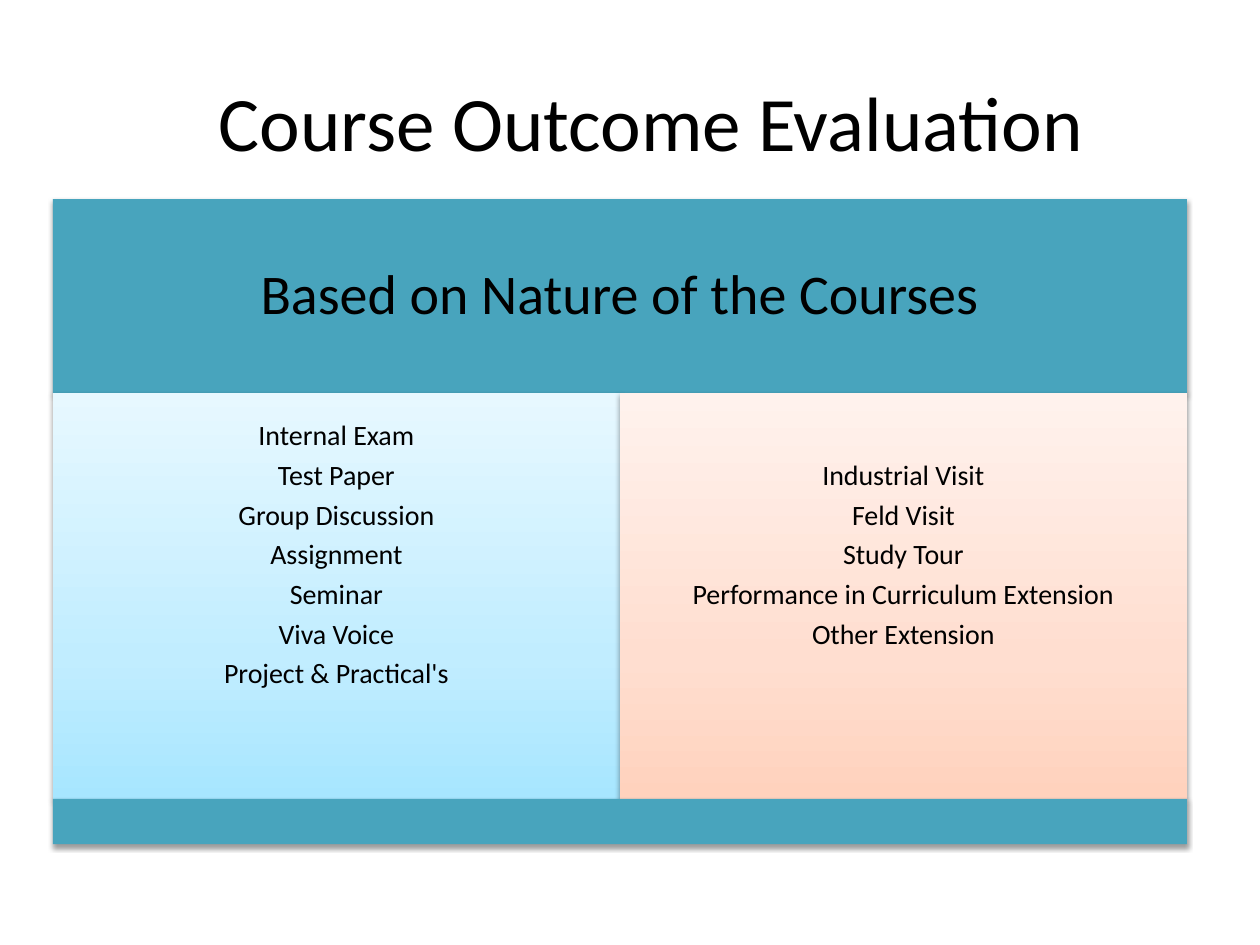
from dataclasses import dataclass

from lxml import etree
from pptx import Presentation
from pptx import util as u
from pptx.dml.color import RGBColor
from pptx.enum import shapes, text
from pptx.oxml.ns import qn

FONT = "Calibri"
COLORS = {"text": "000000", "teal": "48A4BD", "shadow": "000000"}
# Gradient stops as (percent, colour), running from bottom to top
GRADIENTS = {
    "blue": ((0, "A7E6FF"), (35, "C1EDFF"), (100, "E7F8FF")),
    "peach": ((0, "FFD2BD"), (35, "FFDED0"), (100, "FFF2ED")),
}

LEFT, TOP, WIDTH = 0.42, 1.58, 9
HEADER_HEIGHT, COLUMN_HEIGHT, FOOTER_HEIGHT = 1.54, 3.22, 0.36
COLUMN_TOP = TOP + HEADER_HEIGHT
COLUMN_WIDTH = WIDTH / 2


@dataclass
class Panel:
    left: float
    top: float
    width: float
    height: float
    fill: str
    lines: tuple[str, ...] = ()
    size: float = 16
    space_after: float = 5.4
    inset: float = 0.07
    bottom_inset: float = 0.07


PANELS = (
    Panel(LEFT, TOP, WIDTH, HEADER_HEIGHT, "teal",
          ("Based on Nature of the Courses",),
          size=32, space_after=11, inset=0.13, bottom_inset=0.13),
    Panel(LEFT, COLUMN_TOP, COLUMN_WIDTH, COLUMN_HEIGHT, "blue",
          ("Internal Exam", "Test Paper", "Group Discussion", "Assignment",
           "Seminar", "Viva Voice", "Project & Practical's"),
          bottom_inset=0.71),
    Panel(LEFT + COLUMN_WIDTH, COLUMN_TOP, COLUMN_WIDTH, COLUMN_HEIGHT, "peach",
          ("Industrial Visit", "Feld Visit", "Study Tour",
           "Performance in Curriculum Extension", "Other Extension"),
          bottom_inset=0.71),
    Panel(LEFT, COLUMN_TOP + COLUMN_HEIGHT, WIDTH, FOOTER_HEIGHT, "teal"),
)


def add_run(paragraph, words: str, size: float) -> None:
    paragraph.alignment = text.PP_ALIGN.CENTER
    run = paragraph.add_run()
    run.text = words
    run.font.name = FONT
    run.font.size = u.Pt(size)
    run.font.color.rgb = RGBColor.from_string(COLORS["text"])


def fill_shape(shape, name: str) -> None:
    if name in COLORS:
        shape.fill.solid()
        shape.fill.fore_color.rgb = RGBColor.from_string(COLORS[name])
        return
    shape.fill.gradient()
    gradient = shape._element.spPr.find(qn("a:gradFill"))
    gradient.find(qn("a:lin")).set("ang", str(270 * 60000))
    stops = gradient.find(qn("a:gsLst"))
    for stop in list(stops):
        stops.remove(stop)
    for percent, color in GRADIENTS[name]:
        stop = etree.SubElement(stops, qn("a:gs"), pos=str(percent * 1000))
        etree.SubElement(stop, qn("a:srgbClr"), val=color)


def add_shadow(shape) -> None:
    shape.shadow.inherit = False
    effects = shape._element.spPr.find(qn("a:effectLst"))
    shadow = etree.SubElement(
        effects, qn("a:outerShdw"), blurRad=str(u.Pt(3.1)), dist=str(u.Pt(1.6)),
        dir=str(90 * 60000), rotWithShape="0")
    color = etree.SubElement(shadow, qn("a:srgbClr"), val=COLORS["shadow"])
    etree.SubElement(color, qn("a:alpha"), val="38000")


def add_panel(slide, panel: Panel) -> None:
    shape = slide.shapes.add_shape(
        shapes.MSO_SHAPE.RECTANGLE, u.Inches(panel.left), u.Inches(panel.top),
        u.Inches(panel.width), u.Inches(panel.height))
    fill_shape(shape, panel.fill)
    shape.line.fill.background()
    add_shadow(shape)
    frame = shape.text_frame
    frame.word_wrap = True
    frame.vertical_anchor = text.MSO_ANCHOR.MIDDLE
    frame.margin_left = frame.margin_right = frame.margin_top = u.Inches(panel.inset)
    frame.margin_bottom = u.Inches(panel.bottom_inset)
    for index, line in enumerate(panel.lines):
        paragraph = frame.add_paragraph() if index else frame.paragraphs[0]
        paragraph.line_spacing = 0.9
        paragraph.space_after = u.Pt(panel.space_after)
        add_run(paragraph, line, panel.size)


def set_title(slide, words: str) -> None:
    title = slide.shapes.title
    title.left, title.top = u.Inches(0.67), u.Inches(0.5)
    title.width, title.height = u.Inches(9), u.Inches(1.67)
    frame = title.text_frame
    frame.vertical_anchor = text.MSO_ANCHOR.TOP
    frame.margin_top = u.Inches(0.09)
    add_run(frame.paragraphs[0], words, 44)


def main() -> None:
    presentation = Presentation()
    presentation.slide_width, presentation.slide_height = u.Inches(10), u.Inches(7.5)
    slide = presentation.slides.add_slide(presentation.slide_layouts[5])
    set_title(slide, "Course Outcome Evaluation")
    for panel in PANELS:
        add_panel(slide, panel)
    presentation.save("out.pptx")


if __name__ == "__main__":
    main()
